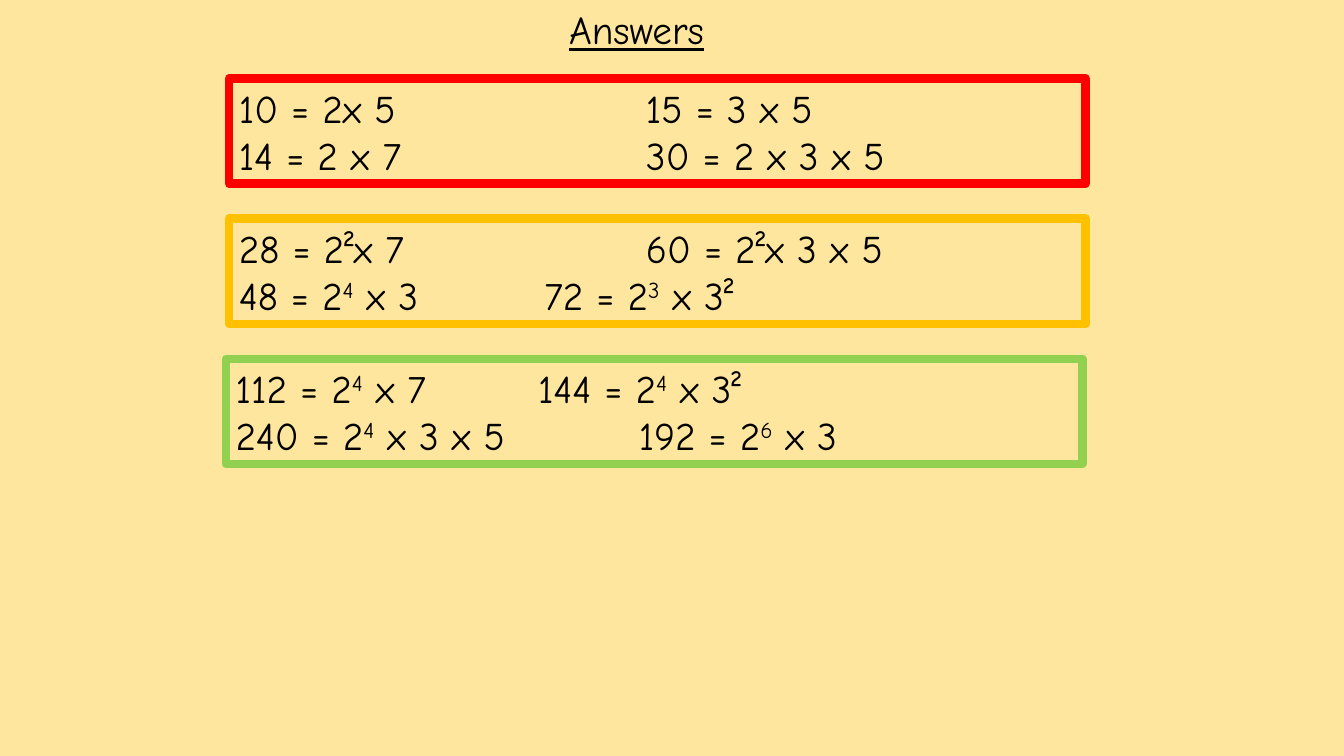
from lxml import etree
from pptx import Presentation
from pptx.dml.color import RGBColor
from pptx.enum.shapes import MSO_SHAPE
from pptx.enum.text import MSO_ANCHOR, MSO_AUTO_SIZE, PP_ALIGN
from pptx.oxml.ns import qn
from pptx.util import Cm, Pt

RECT = MSO_SHAPE.RECTANGLE
MIDDLE = MSO_ANCHOR.MIDDLE
FIT = MSO_AUTO_SIZE.SHAPE_TO_FIT_TEXT
LEFT, CENTER = PP_ALIGN.LEFT, PP_ALIGN.CENTER

COLORS = {"back": "FFE69E", "ink": "000000", "red": "FF0000",
          "amber": "FFC000", "green": "92D050"}

TOP, STEP = 1.98, 3.53

# Colour, left edge, then (first sum, second sum, tab stop) for each row
BOXES = [
    ("red", 5.77, [("10 = 2x 5", "15 = 3 x 5", 10.26),
                   ("14 = 2 x 7", "30 = 2 x 3 x 5", 10.26)]),
    ("amber", 5.77, [("28 = 2²x 7", "60 = 2²x 3 x 5", 10.26),
                     ("48 = 2^4 x 3", "72 = 2^3 x 3²", 7.7)]),
    ("green", 5.69, [("112 = 2^4 x 7", "144 = 2^4 x 3²", 7.62),
                     ("240 = 2^4 x 3 x 5", "192 = 2^6 x 3", 10.16)]),
]


class Sheet:
    font, size, line = "Comic Neue", Pt(28), Pt(6)

    def __init__(self, deck):
        self.slide = deck.slides.add_slide(deck.slide_layouts[5])
        fill = self.slide.background.fill
        fill.solid()
        fill.fore_color.rgb = self.color("back")

    def color(self, name):
        return RGBColor.from_string(COLORS[name])

    def style(self, run):
        run.font.name = self.font
        run.font.size = self.size
        run.font.color.rgb = self.color("ink")

    def title(self, text, left, top, width, height):
        shape = self.slide.shapes.title
        shape.left, shape.top = Cm(left), Cm(top)
        shape.width, shape.height = Cm(width), Cm(height)
        frame = shape.text_frame
        frame.text = text
        frame.auto_size = FIT
        frame.vertical_anchor = MIDDLE
        para = frame.paragraphs[0]
        para.alignment = CENTER
        self.style(para.runs[0])
        para.runs[0].font.underline = True

    def box(self, color, left, top, width, height, rows):
        shape = self.slide.shapes.add_shape(
            RECT, Cm(left), Cm(top), Cm(width), Cm(height))
        shape.shadow.inherit = False
        shape.fill.background()
        shape.line.color.rgb = self.color(color)
        shape.line.width = self.line
        frame = shape.text_frame
        frame.word_wrap = True
        frame.auto_size = FIT
        frame.vertical_anchor = MIDDLE
        frame.text = "\n" * (len(rows) - 1)
        for para, (first, second, stop) in zip(frame.paragraphs, rows):
            para.alignment = LEFT
            self.tab(para, stop)
            self.power(para, f"{first}\t{second}")

    def tab(self, para, stop):
        props = para._p.get_or_add_pPr()
        tabs = etree.SubElement(props, qn("a:tabLst"))
        etree.SubElement(tabs, qn("a:tab"), pos=str(Cm(stop)), algn="l")

    def power(self, para, text):
        """Write text, raising the one digit that follows each ^."""
        head, *parts = text.split("^")
        self.run(para, head)
        for part in parts:
            self.run(para, part[0], True)
            self.run(para, part[1:])

    def run(self, para, text, raised=False):
        if not text:
            return
        run = para.add_run()
        run.text = text
        self.style(run)
        if raised:
            run._r.get_or_add_rPr().set("baseline", "30000")


def main():
    deck = Presentation()
    deck.slide_width, deck.slide_height = Cm(33.87), Cm(19.05)
    sheet = Sheet(deck)
    sheet.title("Answers", 10.77, 0, 10.54, 1.45)
    for i, (color, left, rows) in enumerate(BOXES):
        sheet.box(color, left, TOP + i * STEP, 21.59, 2.65, rows)
    deck.save("out.pptx")


if __name__ == "__main__":
    main()
